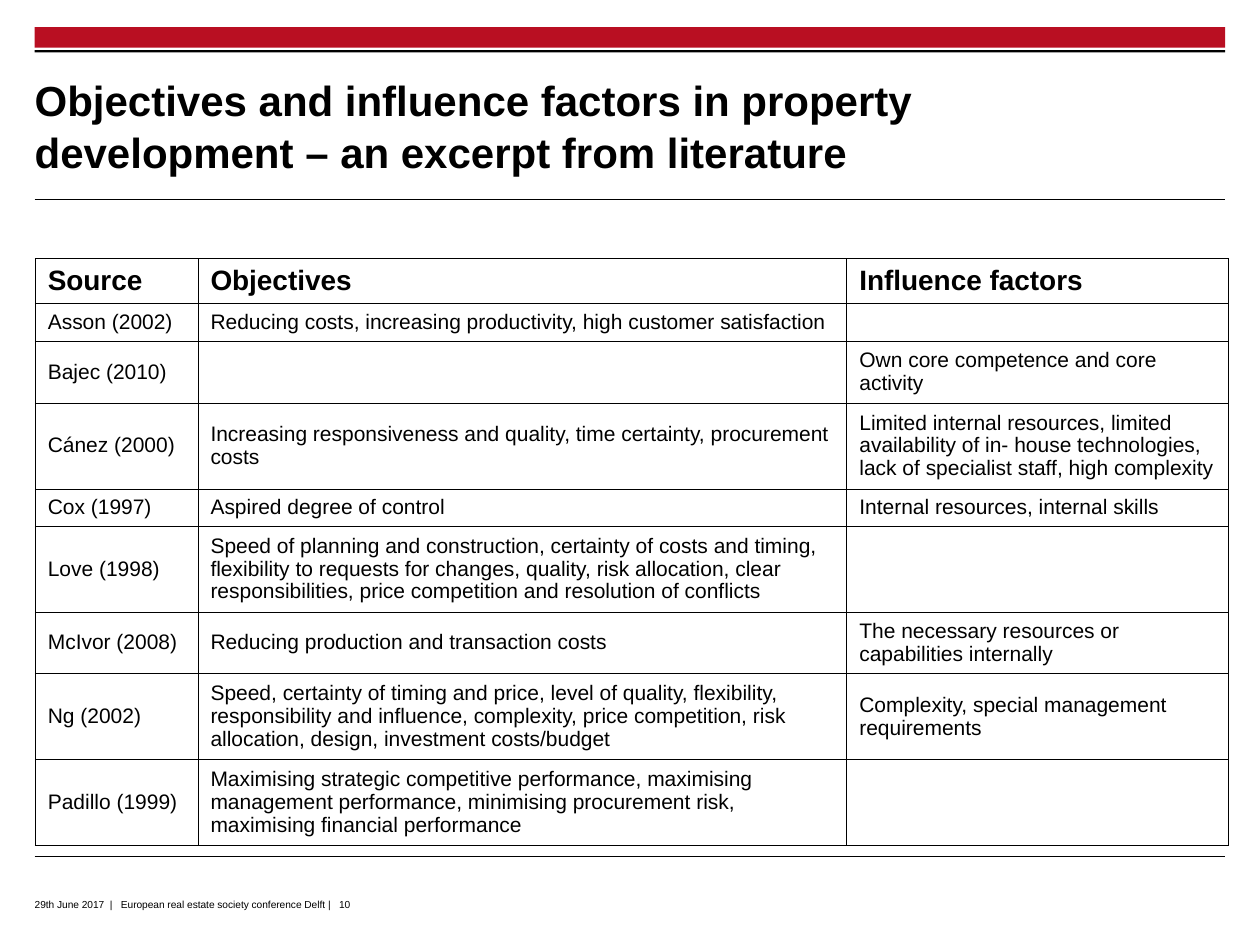
from dataclasses import dataclass

from lxml.etree import SubElement
from pptx import Presentation
from pptx.dml.color import RGBColor
from pptx.enum.shapes import MSO_CONNECTOR, MSO_SHAPE
from pptx.enum.text import MSO_ANCHOR
from pptx.oxml import parse_xml
from pptx.oxml.ns import qn
from pptx.util import Cm, Pt


@dataclass(frozen=True)
class Theme:
    """Colours, font and type sizes of the deck."""
    red: str = "B90F22"
    black: str = "000000"
    font: str = "Arial"
    title: float = 24
    head: float = 16
    body: float = 12
    foot: float = 10
    rule: float = 0.6
    grid: float = 0.48


THEME = Theme()
NS = "http://schemas.openxmlformats.org/drawingml/2006/main"
WIDTHS = [3.28, 13.08, 7.7]
ROWS = [
    (0.88, "Source", "Objectives", "Influence factors"),
    (0.73, "Asson (2002)",
     "Reducing costs, increasing productivity, high customer satisfaction", ""),
    (1.21, "Bajec (2010)", "", "Own core competence and core activity"),
    (1.67, "Cánez (2000)",
     "Increasing responsiveness and quality, time certainty, procurement costs",
     "Limited internal resources, limited availability of in- house technologies, "
     "lack of specialist staff, high complexity"),
    (0.73, "Cox (1997)", "Aspired degree of control",
     "Internal resources, internal skills"),
    (1.67, "Love (1998)",
     "Speed of planning and construction, certainty of costs and timing, "
     "flexibility to requests for changes, quality, risk allocation, clear "
     "responsibilities, price competition and resolution of conflicts", ""),
    (1.21, "McIvor (2008)", "Reducing production and transaction costs",
     "The necessary resources or capabilities internally"),
    (1.67, "Ng (2002)",
     "Speed, certainty of timing and price, level of quality, flexibility, "
     "responsibility and influence, complexity, price competition, risk "
     "allocation, design, investment costs/budget",
     "Complexity, special management requirements"),
    (1.67, "Padillo (1999)",
     "Maximising strategic competitive performance, maximising management "
     "performance, minimising procurement risk, maximising financial performance",
     ""),
]


def write(frame, text, size, bold=False, space=1.0, shift=0):
    """Put formatted text in the first paragraph of a frame."""
    para = frame.paragraphs[0]
    para.line_spacing = space
    if not text:
        para._p.get_or_add_endParaRPr().set("sz", str(int(size * 100)))
        return
    run = para.add_run()
    run.text = text
    font = run.font
    font.name, font.size, font.bold = THEME.font, Pt(size), bold
    font.color.rgb = RGBColor.from_string(THEME.black)
    if shift:
        run._r.get_or_add_rPr().set("baseline", str(shift * 1000))


def label(slide, box, text, anchor, **style):
    """Add a text box without margins."""
    frame = slide.shapes.add_textbox(*map(Cm, box)).text_frame
    frame.word_wrap = True
    frame.vertical_anchor = anchor
    frame.margin_left = frame.margin_right = 0
    frame.margin_top = frame.margin_bottom = 0
    write(frame, text, **style)


def band(slide, box, color):
    """Add a filled bar without outline."""
    bar = slide.shapes.add_shape(MSO_SHAPE.RECTANGLE, *map(Cm, box))
    bar.shadow.inherit = False
    bar.fill.solid()
    bar.fill.fore_color.rgb = RGBColor.from_string(color)
    bar.line.fill.background()


def rule(slide, left, top, width):
    """Add a thin level line."""
    line = slide.shapes.add_connector(
        MSO_CONNECTOR.STRAIGHT, Cm(left), Cm(top), Cm(left + width), Cm(top))
    line.line.width = Pt(THEME.rule)
    line.line.color.rgb = RGBColor.from_string(THEME.black)
    SubElement(line._element.spPr, qn("a:effectLst"))


def header(slide, box):
    """Place the bars, the title and the rule below it."""
    left, top, width, height = box
    band(slide, (left, top, width, 0.41), THEME.red)
    band(slide, (left, top + 0.46, width, 0.05), THEME.black)
    label(slide, (left, top + 0.79, 19.1, 2.34),
          "Objectives and influence factors in property development "
          "– an excerpt from literature",
          MSO_ANCHOR.MIDDLE, size=THEME.title, bold=True, space=1.05)
    rule(slide, left, top + height, width)


def frame_cell(cell):
    """Clear the fill of a cell and draw its four borders."""
    props = cell._tc.get_or_add_tcPr()
    for side in ("lnL", "lnR", "lnT", "lnB"):
        props.append(parse_xml(
            f'<a:{side} xmlns:a="{NS}" w="{Pt(THEME.grid)}"><a:solidFill>'
            f'<a:srgbClr val="{THEME.black}"/></a:solidFill></a:{side}>'))
    cell.fill.background()


def matrix(slide, box):
    """Place the table of sources, objectives and factors."""
    shape = slide.shapes.add_table(len(ROWS), len(WIDTHS), *map(Cm, box))
    table = shape.table
    table.first_row = table.horz_banding = False
    for column, width in zip(table.columns, WIDTHS):
        column.width = Cm(width)
    for index, (height, *texts) in enumerate(ROWS):
        table.rows[index].height = Cm(height)
        head = index == 0
        for cell, text in zip(table.rows[index].cells, texts):
            cell.vertical_anchor = MSO_ANCHOR.MIDDLE
            frame_cell(cell)
            write(cell.text_frame, text, THEME.head if head else THEME.body,
                  bold=head, space=0.97)


def footer(slide, box):
    """Place the bottom rule and the conference line."""
    left, top, width, height = box
    rule(slide, left, top, width)
    label(slide, (left, top + 0.61, width, height - 0.61),
          "29th June 2017  |   European real estate society conference Delft |   10",
          MSO_ANCHOR.TOP, size=THEME.foot, shift=-25)


def main():
    """Build and save the slide."""
    deck = Presentation()
    deck.slide_width, deck.slide_height = Cm(25.4), Cm(19.05)
    slide = deck.slides.add_slide(deck.slide_layouts[6])
    header(slide, (0.7, 0.55, 24, 3.48))
    matrix(slide, (0.71, 5.21, sum(WIDTHS), sum(row[0] for row in ROWS)))
    footer(slide, (0.7, 17.27, 24, 1.25))
    deck.save("out.pptx")


if __name__ == "__main__":
    main()
